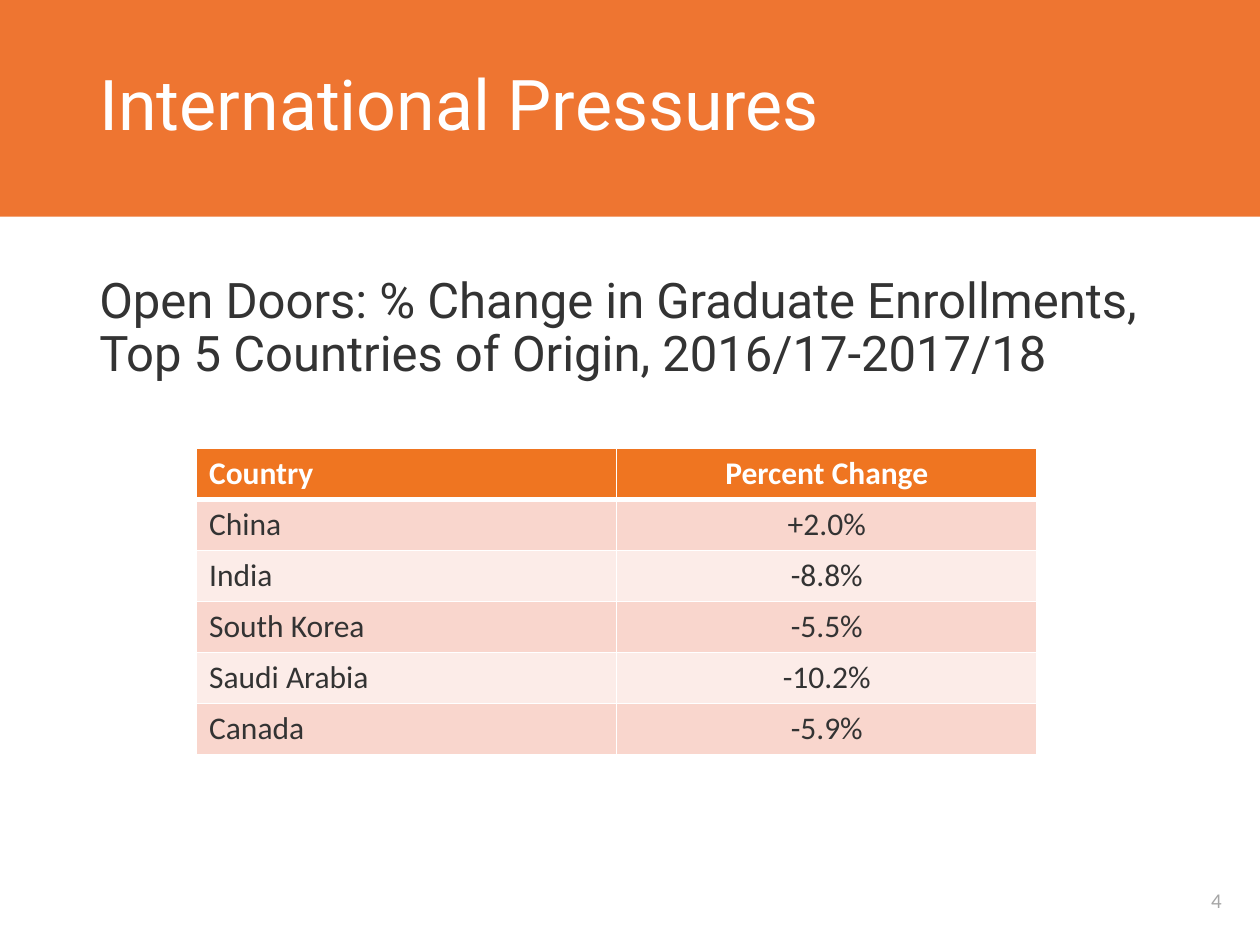
from lxml import etree
from pptx import Presentation
from pptx import util as u
from pptx.dml.color import RGBColor
from pptx.enum import shapes, text
from pptx.oxml.ns import qn

BANNER = RGBColor(0xEE, 0x75, 0x31)
HEADER = RGBColor(0xEF, 0x75, 0x21)
BAND_DARK = RGBColor(0xF9, 0xD6, 0xCD)
BAND_LIGHT = RGBColor(0xFC, 0xEC, 0xE8)
INK = RGBColor(0x33, 0x33, 0x33)
GREY = RGBColor(0xA6, 0xA6, 0xA6)
WHITE = RGBColor(0xFF, 0xFF, 0xFF)

ENROLLMENTS = [
    ("Country", "Percent Change"),
    ("China", "+2.0%"),
    ("India", "-8.8%"),
    ("South Korea", "-5.5%"),
    ("Saudi Arabia", "-10.2%"),
    ("Canada", "-5.9%"),
]


class Deck:
    """Draws styled elements on the current slide, in a grid of 100 columns by 75 rows."""

    cols, rows = 100, 75
    heading_font, table_font = "Roboto", "Calibri"
    left, centre = text.PP_ALIGN.LEFT, text.PP_ALIGN.CENTER
    top, middle = text.MSO_ANCHOR.TOP, text.MSO_ANCHOR.MIDDLE

    def __init__(self, width, height):
        self.prs = Presentation()
        self.prs.slide_width, self.prs.slide_height = u.Inches(width), u.Inches(height)
        self.s = self.prs.slides.add_slide(self.prs.slide_layouts[6])

    def place(self, x, y, w, h):
        col = self.prs.slide_width / self.cols
        row = self.prs.slide_height / self.rows
        return [u.Emu(round(n)) for n in (x * col, y * row, w * col, h * row)]

    def style(self, p, words, font, size, color, align, bold=False):
        p.text, p.alignment = words, align
        p.font.name, p.font.size, p.font.bold = font, u.Pt(size), bold
        p.font.color.rgb = color

    def rect(self, at, color):
        sp = self.s.shapes.add_shape(shapes.MSO_SHAPE.RECTANGLE, *self.place(*at))
        sp.shadow.inherit = False
        sp.fill.solid()
        sp.fill.fore_color.rgb = color
        sp.line.fill.background()

    def label(self, at, words, font, size, color, align=left, anchor=top, spacing=1.0):
        tf = self.s.shapes.add_textbox(*self.place(*at)).text_frame
        tf.word_wrap, tf.vertical_anchor = True, anchor
        p = tf.paragraphs[0]
        self.style(p, words, font, size, color, align)
        p.line_spacing = spacing

    def border(self, cell, side, points):
        ln = etree.SubElement(cell._tc.get_or_add_tcPr(), qn(f"a:ln{side}"), w=str(u.Pt(points)))
        fill = etree.SubElement(ln, qn("a:solidFill"))
        etree.SubElement(fill, qn("a:srgbClr"), val=str(WHITE))

    def table(self, at, data, size):
        frame = self.s.shapes.add_table(len(data), len(data[0]), *self.place(*at))
        for i, row in enumerate(data):
            head = i == 0
            band = HEADER if head else (BAND_LIGHT, BAND_DARK)[i % 2]
            for j, words in enumerate(row):
                cell = frame.table.cell(i, j)
                self.style(cell.text_frame.paragraphs[0], words, self.table_font, size,
                           WHITE if head else INK, self.centre if j else self.left, head)
                for side, points in zip("LRTB", (1, 1, 3 if i == 1 else 1, 3 if head else 1)):
                    self.border(cell, side, points)
                cell.fill.solid()
                cell.fill.fore_color.rgb = band


def main():
    d = Deck(10, 7.5)
    d.rect((-0.1, 0, 100.2, 17.2), BANNER)
    d.label((93.1, 69.5, 6.9, 3.9), "4", d.table_font, 12, GREY, d.centre, d.middle)
    d.label((6.9, 0, 86.2, 17.1), "International Pressures", d.heading_font, 40, WHITE,
            anchor=d.middle, spacing=0.9)
    d.label((6.9, 21.4, 86.2, 44.7),
            "Open Doors: % Change in Graduate Enrollments, "
            "Top 5 Countries of Origin, 2016/17-2017/18",
            d.heading_font, 28, INK, spacing=0.9)
    d.table((15.6, 35.6, 66.7, 24.3), ENROLLMENTS, 18)
    d.prs.save("out.pptx")


if __name__ == "__main__":
    main()
